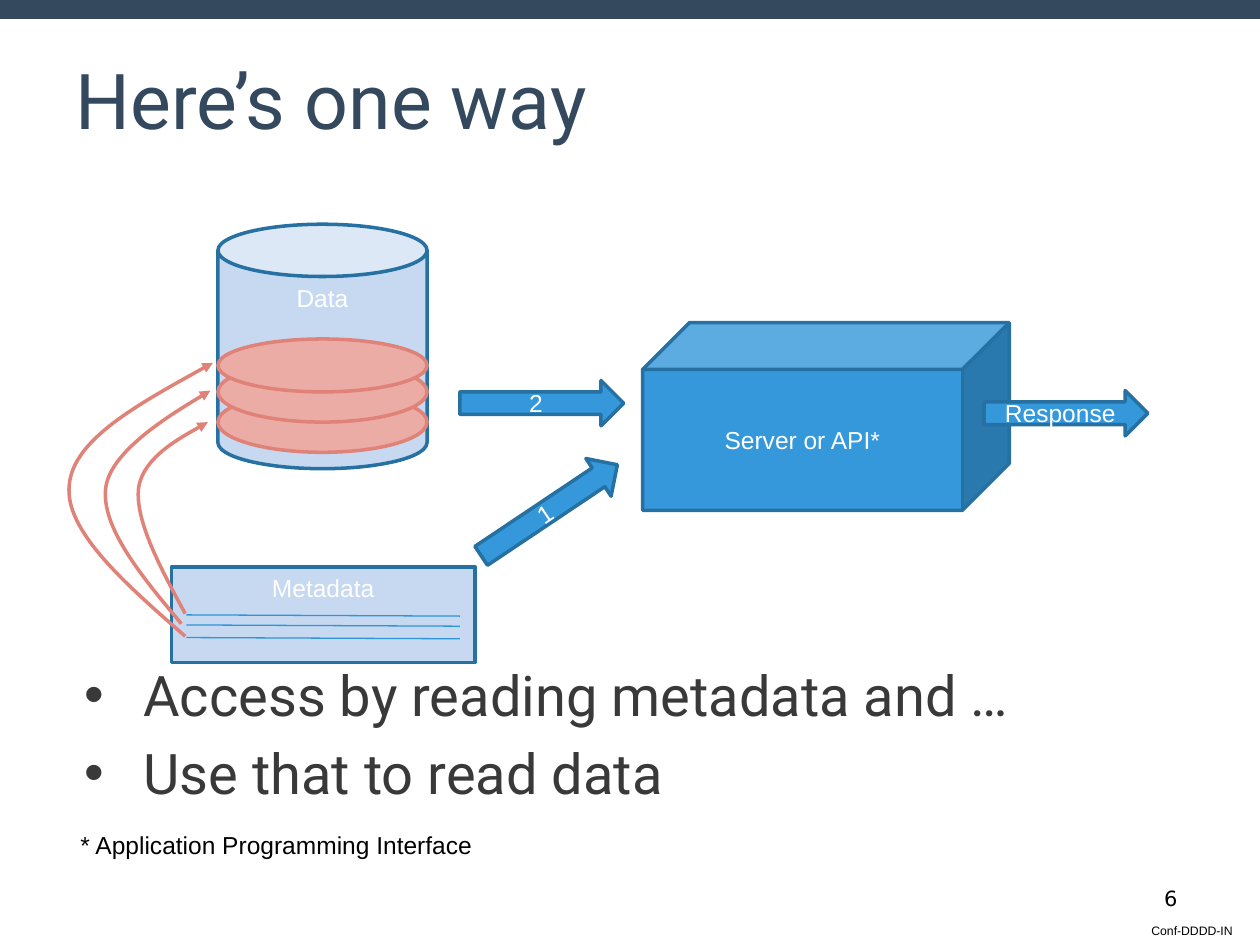
from lxml.etree import SubElement as Sub
from pptx import Presentation
from pptx.dml.color import RGBColor
from pptx.enum.shapes import MSO_CONNECTOR as Link, MSO_SHAPE as Kind
from pptx.enum.text import MSO_ANCHOR as Anchor, PP_ALIGN as Align
from pptx.oxml.ns import qn
from pptx.util import Inches, Pt

WIDE, HIGH = 10, 7.5
NAVY, BLUE, EDGE, RULE = "34495E", "3498DB", "2670A2", "2F95DA"
PALE, ROSE, CORAL = "C6D9F1", "EBACA5", "E18278"
WHITE, BLACK, GREY = "FFFFFF", "000000", "393939"

TITLE = "Here’s one way"
POINTS = ["Access by reading metadata and …", "Use that to read data"]
NOTES = [
    ("Conf-DDDD-IN", (9.04, 7.28, 0.97, 0.22), "Arial", 7),
    ("6", (9.14, 6.98, 0.58, 0.3), "DejaVu Sans", 12),
    ("* Application Programming Interface", (0.54, 6.54, 6.03, 0.34), "Arial", 14),
]
STORES = [
    ("Data", Kind.CAN, (1.73, 1.78, 1.66, 1.94)),
    ("Metadata", Kind.RECTANGLE, (1.36, 4.5, 2.41, 0.76)),
]
DISKS = [(3.11, 0.48), (2.87, 0.48), (2.69, 0.42)]
ROWS = [4.88, 4.96, 5.06]
CURVES = [
    [(1.47, 4.87), (1.27, 4.5), (1.07, 4.13), (1.1, 3.87),
     (1.14, 3.62), (1.65, 3.35), (1.65, 3.35)],
    [(1.44, 4.95), (1.12, 4.57), (0.8, 4.18), (0.84, 3.87),
     (0.88, 3.56), (1.67, 3.1), (1.67, 3.1)],
    [(1.47, 5.05), (0.99, 4.63), (0.51, 4.21), (0.55, 3.85),
     (0.58, 3.49), (1.13, 3.19), (1.69, 2.88)],
]
SERVER = ("Server or API*", (5.1, 2.56, 2.91, 1.49))
ARROWS = [("1", 3.71, 3.87, 326.2), ("2", 3.65, 3.02, 0), ("Response", 7.81, 3.1, 0)]
ARROW = (1.3, 0.36)


def color(code):
    return RGBColor.from_string(code)


def apply(item, form):
    for key, val in form.items():
        setattr(item, key, val)


def write(shape, lines, font, size, ink, anchor=Anchor.TOP, align=Align.LEFT,
          pad=0.05, bullet=False):
    frame = shape.text_frame
    apply(frame, {"word_wrap": True, "vertical_anchor": anchor,
                  "margin_left": Inches(0.1), "margin_right": Inches(0.1),
                  "margin_top": Inches(pad), "margin_bottom": Inches(pad)})
    for i, line in enumerate(lines):
        para = frame.add_paragraph() if i else frame.paragraphs[0]
        para.text = line
        para.alignment = align
        if bullet:
            if i:
                para.space_before = Pt(6.4)
            props = para._p.get_or_add_pPr()
            apply_xml(props, marL=Inches(0.5), indent=Inches(-0.47))
            apply_xml(Sub(props, qn("a:buFont")), typeface="Arial")
            apply_xml(Sub(props, qn("a:buChar")), char="•")
        apply(para.runs[0].font, {"name": font, "size": Pt(size)})
        para.runs[0].font.color.rgb = color(ink)


def apply_xml(node, **attrs):
    for key, val in attrs.items():
        node.set(key, str(val))


def stroke(shape, ink, width):
    shape.line.color.rgb = color(ink)
    shape.line.width = Pt(width)


def block(kind, box, fill, line=None):
    shape = shapes.add_shape(kind, *map(Inches, box))
    shape.shadow.inherit = False
    shape.fill.solid()
    shape.fill.fore_color.rgb = color(fill)
    if line:
        stroke(shape, line, 2)
    else:
        shape.line.fill.background()
    return shape


def label(shape, text, anchor=Anchor.MIDDLE):
    write(shape, [text], "Arial", 14, WHITE, anchor, Align.CENTER)


def curve(knots):
    start, *rest = [(Inches(x), Inches(y)) for x, y in knots]
    pen = shapes.build_freeform(*start, scale=1.0)
    pen.add_line_segments(rest, close=False)
    shape = pen.convert_to_shape()
    shape.shadow.inherit = False
    shape.fill.background()
    stroke(shape, CORAL, 2)
    apply_xml(Sub(shape.line._get_or_add_ln(), qn("a:tailEnd")), type="triangle")
    route = shape._element.find(".//" + qn("a:path"))
    steps = route.findall(qn("a:lnTo"))
    for i in range(0, len(steps), 3):
        bend = Sub(route, qn("a:cubicBezTo"))
        for step in steps[i:i + 3]:
            bend.append(step[0])
            route.remove(step)


deck = Presentation()
deck.slide_width, deck.slide_height = Inches(WIDE), Inches(HIGH)
slide = deck.slides.add_slide(deck.slide_layouts[5])
shapes = slide.shapes

block(Kind.RECTANGLE, (0, 0, WIDE, 0.15), NAVY)
title = shapes.title
apply(title, {"left": Inches(0.5), "top": Inches(0.3),
              "width": Inches(9), "height": Inches(0.96)})
write(title, [TITLE], "Roboto", 44, NAVY, Anchor.MIDDLE, pad=0.1)

body = shapes.add_textbox(*map(Inches, (0.54, 5.14, 8.96, 1.46)))
write(body, POINTS, "Roboto", 32, GREY, pad=0.1, bullet=True)
for text, box, font, size in NOTES:
    write(shapes.add_textbox(*map(Inches, box)), [text], font, size, BLACK)

for text, kind, box in STORES:
    label(block(kind, box, PALE, EDGE), text, Anchor.TOP)
for top, tall in DISKS:
    block(Kind.OVAL, (1.73, top, 1.66, tall), ROSE, CORAL)
for row in ROWS:
    rule = shapes.add_connector(Link.STRAIGHT, *map(Inches, (1.48, row, 3.65, row + 0.01)))
    stroke(rule, RULE, 0.75)
    Sub(rule._element.spPr, qn("a:effectLst"))
for knots in CURVES:
    curve(knots)

name, box = SERVER
label(block(Kind.CUBE, box, BLUE, EDGE), name)
for text, left, top, turn in ARROWS:
    arrow = block(Kind.RIGHT_ARROW, (left, top, *ARROW), BLUE, EDGE)
    arrow.rotation = turn
    label(arrow, text)

deck.save("out.pptx")
